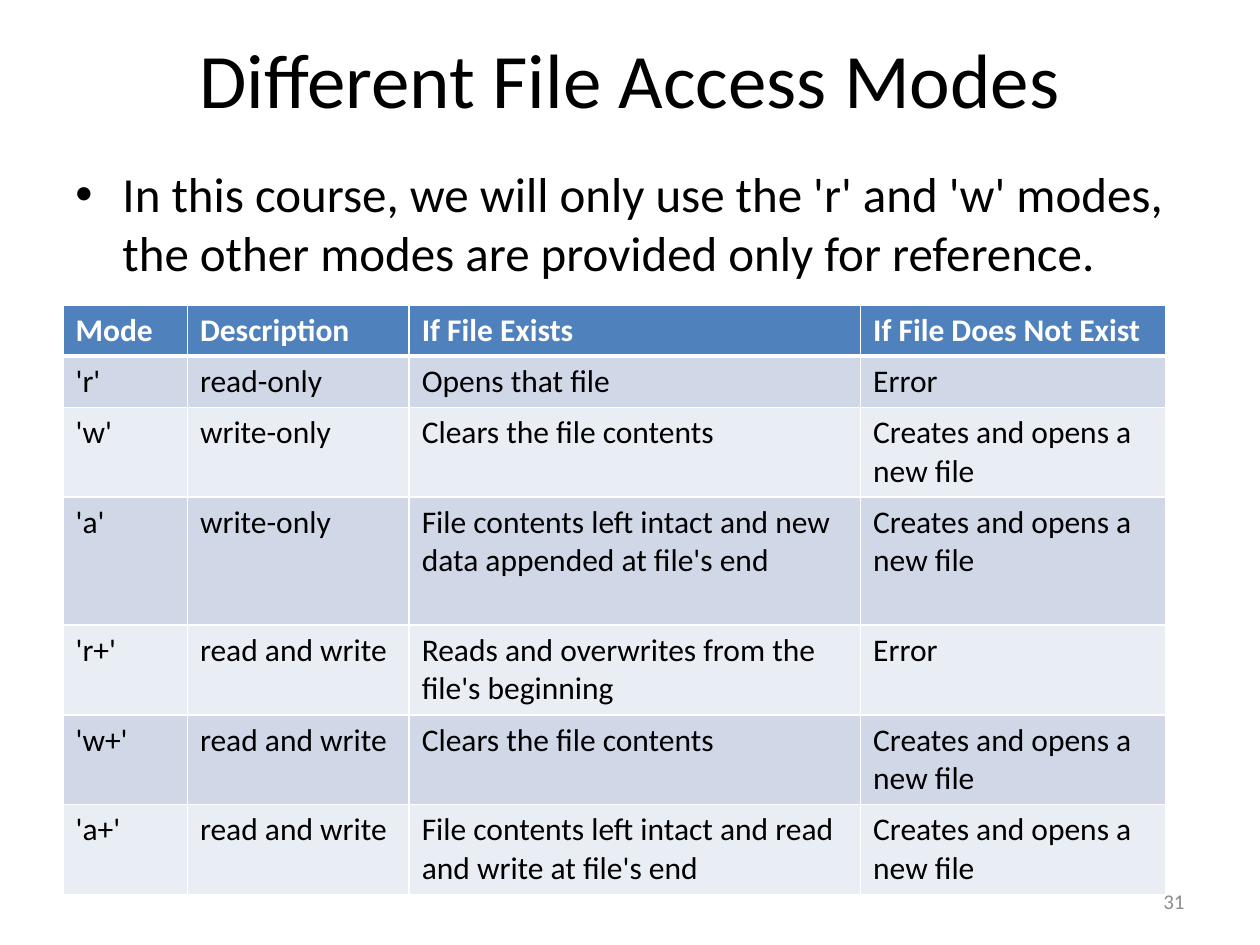
import pptx
import pptx.dml.color
import pptx.enum.text
import pptx.oxml.ns
import pptx.util
from lxml import etree

Cm = pptx.util.Cm
Pt = pptx.util.Pt
RGBColor = pptx.dml.color.RGBColor
ALIGN = pptx.enum.text.PP_ALIGN
ANCHOR = pptx.enum.text.MSO_ANCHOR

BLACK = RGBColor(0x00, 0x00, 0x00)
WHITE = RGBColor(0xFF, 0xFF, 0xFF)
GREY = RGBColor(0x8C, 0x8C, 0x8C)
HEADER_BLUE = RGBColor(0x4F, 0x81, 0xBD)
BANDS = (RGBColor(0xD0, 0xD8, 0xE8), RGBColor(0xE9, 0xED, 0xF4))

NEW_FILE = "Creates and opens a new file"
MODES = [
    ("Mode", "Description", "If File Exists", "If File Does Not Exist"),
    ("'r'", "read-only", "Opens that file", "Error"),
    ("'w'", "write-only", "Clears the file contents", NEW_FILE),
    ("'a'", "write-only", "File contents left intact and new data appended at file's end", NEW_FILE),
    ("'r+'", "read and write", "Reads and overwrites from the file's beginning", "Error"),
    ("'w+'", "read and write", "Clears the file contents", NEW_FILE),
    ("'a+'", "read and write", "File contents left intact and read and write at file's end", NEW_FILE),
]
COLUMN_WIDTHS = (2.51, 4.47, 9.1, 6.15)
ROW_HEIGHTS = (1.03, 1.03, 1.81, 2.58, 1.81, 1.81, 1.81)


class SlideBuilder:
    """Holds the text style and the current page, and adds elements to it."""

    def __init__(self, page, font="Calibri"):
        self.page = page
        self.font = font

    def span(self, para, text, size, color, bold=False):
        span = para.add_run()
        span.text = text
        span.font.name = self.font
        span.font.size = Pt(size)
        span.font.bold = bold
        span.font.color.rgb = color

    def text(self, area, text, size, color, align=ALIGN.LEFT, anchor=ANCHOR.TOP):
        box = self.page.shapes.add_textbox(*(Cm(length) for length in area))
        box.text_frame.word_wrap = True
        box.text_frame.vertical_anchor = anchor
        para = box.text_frame.paragraphs[0]
        para.alignment = align
        self.span(para, text, size, color)
        return para

    def bullet(self, area, text, size, color, indent=0.95):
        properties = self.text(area, text, size, color)._p.get_or_add_pPr()
        properties.set("marL", str(Cm(indent)))
        properties.set("indent", str(-Cm(indent)))
        qn = pptx.oxml.ns.qn
        etree.SubElement(properties, qn("a:buFont"), typeface="Arial")
        etree.SubElement(properties, qn("a:buChar"), char="•")

    def border(self, cell, side, width, color):
        qn = pptx.oxml.ns.qn
        line = etree.SubElement(cell._tc.get_or_add_tcPr(), qn(f"a:{side}"), w=str(Pt(width)))
        fill = etree.SubElement(line, qn("a:solidFill"))
        etree.SubElement(fill, qn("a:srgbClr"), val=str(color))

    def table(self, left, top, rows, widths, heights, size):
        frame = self.page.shapes.add_table(
            len(rows), len(widths), Cm(left), Cm(top), Cm(sum(widths)), Cm(sum(heights)))
        table = frame.table
        for column, width in zip(table.columns, widths):
            column.width = Cm(width)
        for index, (row, height) in enumerate(zip(rows, heights)):
            table.rows[index].height = Cm(height)
            header = index == 0
            for position, text in enumerate(row):
                cell = table.cell(index, position)
                for side in ("lnL", "lnR", "lnT", "lnB"):
                    thick = (header and side == "lnB") or (index == 1 and side == "lnT")
                    self.border(cell, side, 3 if thick else 1, WHITE)
                cell.fill.solid()
                cell.fill.fore_color.rgb = HEADER_BLUE if header else BANDS[(index - 1) % 2]
                self.span(cell.text_frame.paragraphs[0], text, size,
                          WHITE if header else BLACK, header)


def main():
    deck = pptx.Presentation()
    deck.slide_width, deck.slide_height = Cm(25.4), Cm(19.05)
    builder = SlideBuilder(deck.slides.add_slide(deck.slide_layouts[6]))
    builder.text((1.27, 0.2, 22.86, 2.74), "Different File Access Modes", 44, BLACK,
                 ALIGN.CENTER, ANCHOR.MIDDLE)
    builder.bullet((1.27, 3.18, 22.86, 12.57),
                   "In this course, we will only use the 'r' and 'w' modes, "
                   "the other modes are provided only for reference.", 28, BLACK)
    builder.text((18.21, 17.65, 5.92, 1.02), "31", 12, GREY, ALIGN.RIGHT, ANCHOR.MIDDLE)
    builder.table(1.27, 6.15, MODES, COLUMN_WIDTHS, ROW_HEIGHTS, 18)
    deck.save("out.pptx")


if __name__ == "__main__":
    main()
